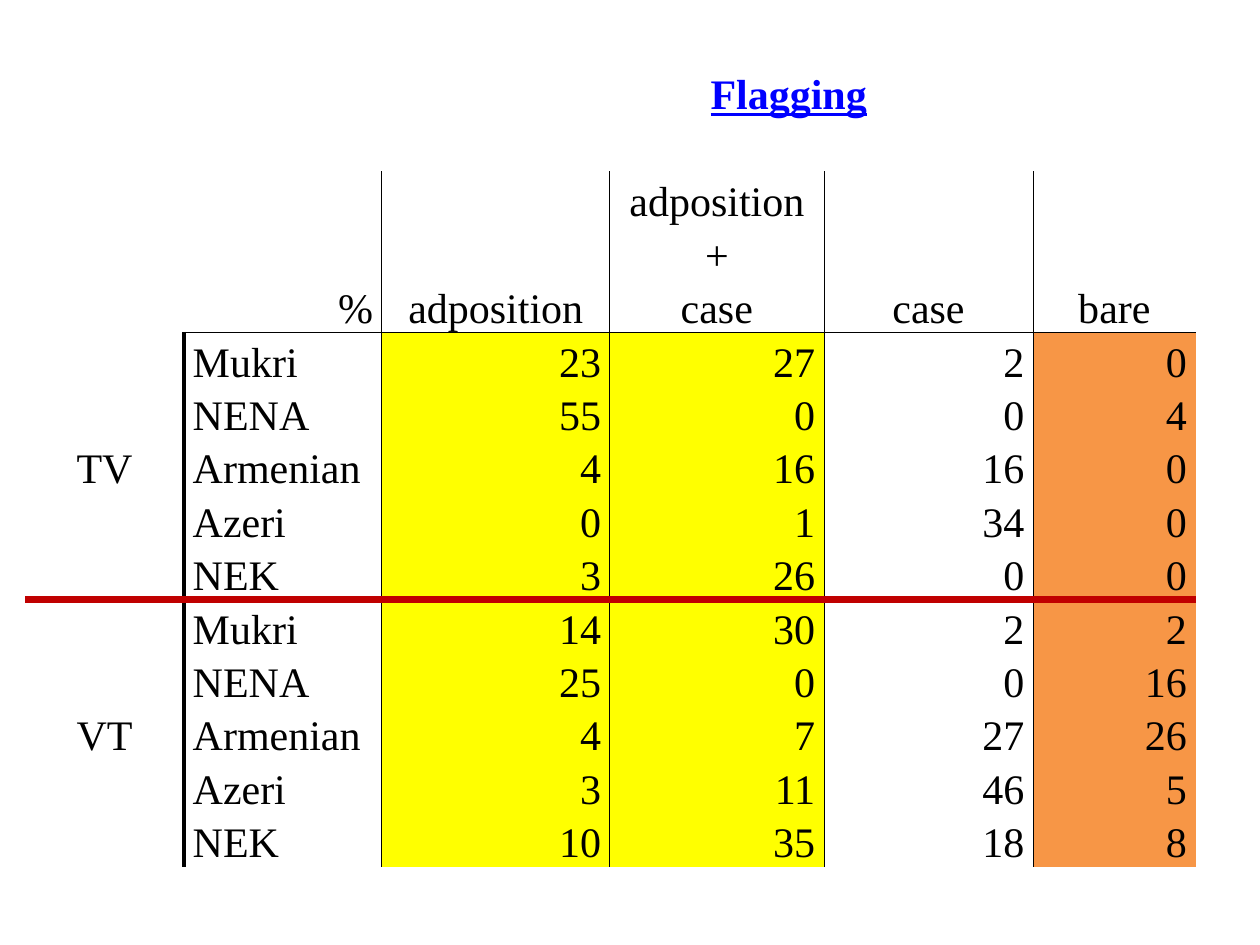
from dataclasses import dataclass

from lxml import etree
from pptx import Presentation
from pptx.dml.color import RGBColor
from pptx.enum.text import MSO_ANCHOR, PP_ALIGN
from pptx.oxml.ns import qn
from pptx.util import Inches, Pt

CENTER, RIGHT, JUSTIFY = PP_ALIGN.CENTER, PP_ALIGN.RIGHT, PP_ALIGN.JUSTIFY
BOTTOM, MIDDLE, TOP = MSO_ANCHOR.BOTTOM, MSO_ANCHOR.MIDDLE, MSO_ANCHOR.TOP
PLAIN_TABLE_STYLE = "{2D5ABB26-0587-4C30-8999-92F81FD0307C}"


@dataclass(frozen=True)
class Theme:
    font: str = "Times New Roman"
    size: float = 24
    line_spacing: float = 1.15
    ink: str = "000000"
    title: str = "0000FF"
    divider: str = "C00000"
    yellow: str = "FFFF00"
    white: str = "FFFFFF"
    orange: str = "F79646"


THEME = Theme()
COLUMN_WIDTHS = [1.26, 1.57, 1.81, 1.7, 1.66, 1.29]
TITLE_HEIGHT, HEADER_HEIGHT, DATA_HEIGHT = 0.84, 1.28, 0.42
TITLE_ROW, HEADER_ROW, FIRST_DATA_ROW = 0, 1, 2

HEADERS = ["%", "adposition", "adposition+\ncase", "case", "bare"]
VALUE_FILLS = [THEME.yellow, THEME.yellow, THEME.white, THEME.orange]
LANGUAGES = ["Mukri", "NENA", "Armenian", "Azeri", "NEK"]
GROUPS = {
    "TV": [(23, 27, 2, 0), (55, 0, 0, 4), (4, 16, 16, 0), (0, 1, 34, 0), (3, 26, 0, 0)],
    "VT": [(14, 30, 2, 2), (25, 0, 0, 16), (4, 7, 27, 26), (3, 11, 46, 5), (10, 35, 18, 8)],
}
GROUP_SIZE = len(LANGUAGES)
DIVIDER_ROW = FIRST_DATA_ROW + GROUP_SIZE

# Line widths in points, keyed by the column or row that follows the edge.
COLUMN_EDGES = {1: 2.25, 2: 1, 3: 0.5, 4: 0.5, 5: 0.5}
ROW_EDGES = {FIRST_DATA_ROW: (THEME.ink, 1), DIVIDER_ROW: (THEME.divider, 4.5)}


def write_cell(cell, text, align, anchor=BOTTOM, color=THEME.ink, heading=False):
    cell.vertical_anchor = anchor
    cell.text_frame.text = text
    for para in cell.text_frame.paragraphs:
        para.alignment = align
        para.line_spacing = THEME.line_spacing
        for span in para.runs:
            span.font.name = THEME.font
            span.font.size = Pt(THEME.size)
            span.font.bold = span.font.underline = heading
            span.font.color.rgb = RGBColor.from_string(color)


def column_edge(row, edge):
    """Return the line on the left of column `edge`, or None."""
    starts_at = FIRST_DATA_ROW if edge == 1 else HEADER_ROW
    if edge in COLUMN_EDGES and row >= starts_at:
        return THEME.ink, COLUMN_EDGES[edge]
    return None


def row_edge(edge, column):
    """Return the line above row `edge`, or None."""
    if edge == FIRST_DATA_ROW and column == 0:
        return None
    return ROW_EDGES.get(edge)


def draw_borders(cell, row, column):
    properties = cell._tc.get_or_add_tcPr()
    lines = {
        "a:lnL": column_edge(row, column),
        "a:lnR": column_edge(row, column + 1),
        "a:lnT": row_edge(row, column),
        "a:lnB": row_edge(row + 1, column),
    }
    for tag, line in lines.items():
        border = etree.SubElement(properties, qn(tag))
        if line is None:
            border.set("w", "0")
            etree.SubElement(border, qn("a:noFill"))
            continue
        color, width = line
        border.set("w", str(Pt(width)))
        fill = etree.SubElement(border, qn("a:solidFill"))
        etree.SubElement(fill, qn("a:srgbClr")).set("val", color)


def format_grid(table):
    """Set the sizes, margins, borders and fills of all cells."""
    heights = [TITLE_HEIGHT, HEADER_HEIGHT] + [DATA_HEIGHT] * GROUP_SIZE * len(GROUPS)
    for column, width in zip(table.columns, COLUMN_WIDTHS):
        column.width = Inches(width)
    for row, height in zip(table.rows, heights):
        row.height = Inches(height)
    for r, row in enumerate(table.rows):
        for c, cell in enumerate(row.cells):
            cell.margin_left = cell.margin_right = Inches(0.07)
            cell.margin_top = cell.margin_bottom = 0
            draw_borders(cell, r, c)
            if r >= FIRST_DATA_ROW and c >= 2:
                cell.fill.solid()
                cell.fill.fore_color.rgb = RGBColor.from_string(VALUE_FILLS[c - 2])
            else:
                cell.fill.background()


def fill_headings(table):
    table.cell(TITLE_ROW, 0).merge(table.cell(HEADER_ROW, 0))
    title = table.cell(TITLE_ROW, 2)
    title.merge(table.cell(TITLE_ROW, len(COLUMN_WIDTHS) - 1))
    write_cell(title, "Flagging", CENTER, TOP, THEME.title, heading=True)
    for c, text in enumerate(HEADERS, start=1):
        write_cell(table.cell(HEADER_ROW, c), text, RIGHT if c == 1 else CENTER)


def fill_group(table, top, name, rows):
    label = table.cell(top, 0)
    label.merge(table.cell(top + GROUP_SIZE - 1, 0))
    write_cell(label, name, CENTER, MIDDLE)
    for r, (language, values) in enumerate(zip(LANGUAGES, rows), start=top):
        write_cell(table.cell(r, 1), language, JUSTIFY)
        for c, value in enumerate(values, start=2):
            write_cell(table.cell(r, c), str(value), RIGHT)


def add_flagging_table(page, left, top, width, height):
    row_count = FIRST_DATA_ROW + GROUP_SIZE * len(GROUPS)
    frame = page.shapes.add_table(row_count, len(COLUMN_WIDTHS), left, top, width, height)
    table = frame.table
    table.first_row = table.horz_banding = False
    table._tbl.tblPr.find(qn("a:tableStyleId")).text = PLAIN_TABLE_STYLE
    format_grid(table)
    fill_headings(table)
    for index, (name, rows) in enumerate(GROUPS.items()):
        fill_group(table, FIRST_DATA_ROW + index * GROUP_SIZE, name, rows)


def main():
    deck = Presentation()
    deck.slide_width, deck.slide_height = Inches(10), Inches(7.5)
    page = deck.slides.add_slide(deck.slide_layouts[6])
    add_flagging_table(page, Inches(0.2), Inches(0.52), Inches(9.29), Inches(6.36))
    deck.save("out.pptx")


if __name__ == "__main__":
    main()
